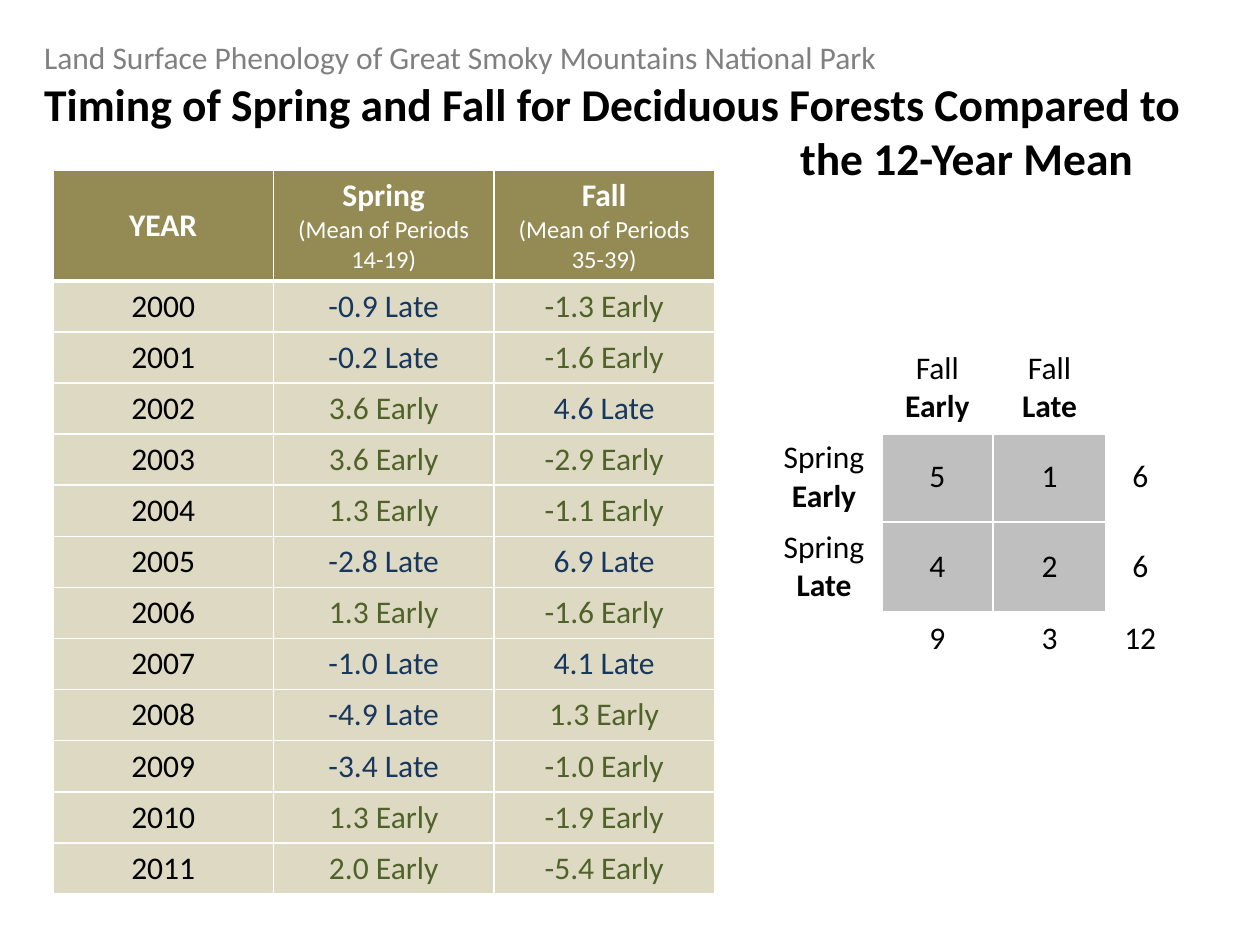
from pptx import Presentation
from pptx.dml.color import RGBColor
from pptx.enum.text import MSO_ANCHOR as Anchor, MSO_AUTO_SIZE as AutoSize, PP_ALIGN as Align
from pptx.oxml.ns import qn
from pptx.util import Inches, Pt
from lxml.etree import SubElement

FONT = "Calibri"
WHITE = RGBColor(0xFF, 0xFF, 0xFF)
BLACK = RGBColor(0x00, 0x00, 0x00)
GRAY = RGBColor(0x80, 0x80, 0x80)
SILVER = RGBColor(0xBF, 0xBF, 0xBF)
OLIVE = RGBColor(0x94, 0x8A, 0x54)
SAND = RGBColor(0xDD, 0xD9, 0xC3)
SEASON_COLORS = {
    "Early": RGBColor(0x4F, 0x62, 0x28),
    "Late": RGBColor(0x17, 0x37, 0x5E),
}

SEASONS = [
    ("2000", "-0.9 Late", "-1.3 Early"),
    ("2001", "-0.2 Late", "-1.6 Early"),
    ("2002", "3.6 Early", "4.6 Late"),
    ("2003", "3.6 Early", "-2.9 Early"),
    ("2004", "1.3 Early", "-1.1 Early"),
    ("2005", "-2.8 Late", "6.9 Late"),
    ("2006", "1.3 Early", "-1.6 Early"),
    ("2007", "-1.0 Late", "4.1 Late"),
    ("2008", "-4.9 Late", "1.3 Early"),
    ("2009", "-3.4 Late", "-1.0 Early"),
    ("2010", "1.3 Early", "-1.9 Early"),
    ("2011", "2.0 Early", "-5.4 Early"),
]
COUNTS = [
    ("", "Fall Early", "Fall Late", ""),
    ("Spring Early", "5", "1", "6"),
    ("Spring Late", "4", "2", "6"),
    ("", "9", "3", "12"),
]


def write_lines(text_frame, lines, align):
    """Write one paragraph per (text, size, bold, color) line."""
    for index, (text, size, bold, color) in enumerate(lines):
        paragraph = text_frame.paragraphs[0] if index == 0 else text_frame.add_paragraph()
        paragraph.alignment = align
        run = paragraph.add_run()
        run.text = text
        run.font.name = FONT
        run.font.size = Pt(size)
        run.font.bold = bold
        run.font.color.rgb = color


def set_borders(cell, bottom_width):
    properties = cell._tc.get_or_add_tcPr()
    widths = {"a:lnL": 1, "a:lnR": 1, "a:lnT": 1, "a:lnB": bottom_width}
    for position, (tag, width) in enumerate(widths.items()):
        line = SubElement(properties, qn(tag), w=str(Pt(width)))
        properties.insert(position, line)
        fill = SubElement(line, qn("a:solidFill"))
        SubElement(fill, qn("a:srgbClr"), val=str(WHITE))


def fill_cell(cell, lines, fill, bottom_width=1):
    cell.fill.solid()
    cell.fill.fore_color.rgb = fill
    cell.vertical_anchor = Anchor.MIDDLE
    write_lines(cell.text_frame, lines, Align.CENTER)
    set_borders(cell, bottom_width)


def add_grid(slide, left, top, column_widths, row_heights):
    frame = slide.shapes.add_table(
        len(row_heights), len(column_widths), Inches(left), Inches(top),
        Inches(sum(column_widths)), Inches(sum(row_heights)))
    table = frame.table
    for column, width in zip(table.columns, column_widths):
        column.width = Inches(width)
    for row, height in zip(table.rows, row_heights):
        row.height = Inches(height)
    return table


def add_title(slide):
    title = slide.shapes.title
    title.left, title.top = Inches(0.25), Inches(0.25)
    title.width, title.height = Inches(9.6), Inches(1.28)
    text_frame = title.text_frame
    text_frame.word_wrap = True
    text_frame.auto_size = AutoSize.NONE
    text_frame.vertical_anchor = Anchor.TOP
    write_lines(text_frame, [
        ("Land Surface Phenology of Great Smoky Mountains National Park", 18, False, GRAY),
        ("Timing of Spring and Fall for Deciduous Forests Compared to", 26, True, BLACK),
        ("the 12-Year Mean", 26, True, BLACK),
    ], Align.LEFT)
    # The last line is indented to the right side
    text_frame.paragraphs[-1]._p.get_or_add_pPr().set("marL", str(Inches(6)))


def add_season_table(slide):
    header_height, total_height = 0.87, 5.73
    row_height = (total_height - header_height) / len(SEASONS)
    table = add_grid(slide, 0.42, 1.35, [1.75] * 3,
                     [header_height] + [row_height] * len(SEASONS))

    # Header row
    headers = [("YEAR", ""), ("Spring", "(Mean of Periods 14-19)"),
               ("Fall", "(Mean of Periods 35-39)")]
    for column, (name, note) in enumerate(headers):
        lines = [(name, 18, True, WHITE)]
        if note:
            lines.append((note, 14, False, WHITE))
        fill_cell(table.cell(0, column), lines, OLIVE, bottom_width=3)

    # One row per year, coloured by early or late
    for row, values in enumerate(SEASONS, start=1):
        for column, text in enumerate(values):
            color = SEASON_COLORS.get(text.split()[-1], BLACK)
            fill_cell(table.cell(row, column), [(text, 18, False, color)], SAND)


def add_count_table(slide):
    table = add_grid(slide, 6.08, 2.72, [0.92, 0.88, 0.9, 0.9], [0.7, 0.7, 0.7, 0.43])
    for row, values in enumerate(COUNTS):
        for column, text in enumerate(values):
            cell = table.cell(row, column)
            # The second word of a label is bold
            lines = [(word, 18, index == 1, BLACK) for index, word in enumerate(text.split())]
            is_count = row in (1, 2) and column in (1, 2)
            fill_cell(cell, lines, SILVER if is_count else WHITE,
                      bottom_width=3 if row == 0 else 1)
            # Row totals sit close to the counts
            if column == 3:
                cell.margin_left, cell.margin_right = Inches(0), Inches(0.36)


def main():
    presentation = Presentation()
    presentation.slide_width, presentation.slide_height = Inches(10), Inches(7.5)
    slide = presentation.slides.add_slide(presentation.slide_layouts[5])
    add_title(slide)
    add_season_table(slide)
    add_count_table(slide)
    presentation.save("out.pptx")


if __name__ == "__main__":
    main()
